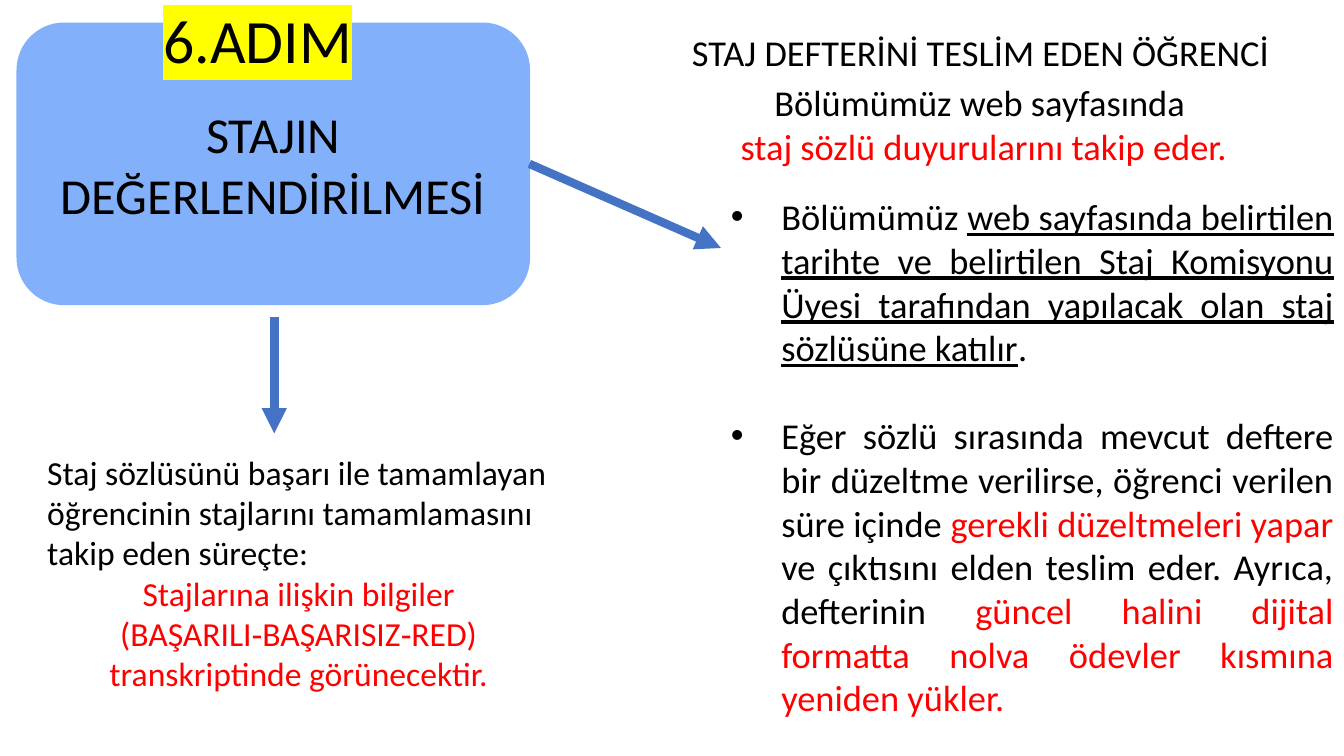
from dataclasses import dataclass

from lxml.etree import SubElement
from pptx import Presentation
from pptx.dml.color import RGBColor
from pptx.enum.shapes import MSO_CONNECTOR as Connector, MSO_SHAPE as Preset
from pptx.enum.text import MSO_ANCHOR as Anchor, MSO_AUTO_SIZE as AutoSize, PP_ALIGN as Align
from pptx.oxml.ns import qn
from pptx.util import Inches, Pt

BLACK = RGBColor(0x00, 0x00, 0x00)
RED = RGBColor(0xFF, 0x00, 0x00)
YELLOW = RGBColor(0xFF, 0xFF, 0x00)
PANEL_BLUE = RGBColor(0x82, 0xB0, 0xFA)
ARROW_BLUE = RGBColor(0x44, 0x72, 0xC4)
FONT = "Calibri"
WIDTH, HEIGHT = Inches(13.33), Inches(7.5)
BULLET_INDENT = Inches(0.5)


@dataclass(frozen=True)
class Run:
    text: str
    color: RGBColor = BLACK
    underline: bool = False
    highlight: RGBColor | None = None


@dataclass(frozen=True)
class Paragraph:
    runs: tuple[Run, ...]
    align: Align = Align.CENTER
    bullet: bool = False
    space_after: float = 0
    line_spacing: float = 1.0


@dataclass(frozen=True)
class Area:
    """Left, top, width and height in percent of the slide."""
    left: float
    top: float
    width: float
    height: float

    def emu(self) -> tuple[int, int, int, int]:
        return across(self.left), down(self.top), across(self.width), down(self.height)


@dataclass(frozen=True)
class TextBlock:
    area: Area
    size: float
    paragraphs: tuple[Paragraph, ...]
    anchor: Anchor = Anchor.TOP
    grow: bool = True


def across(percent: float) -> int:
    return round(WIDTH * percent / 100)


def down(percent: float) -> int:
    return round(HEIGHT * percent / 100)


def add_bullet(paragraph) -> None:
    properties = paragraph._p.get_or_add_pPr()
    properties.set("marL", str(BULLET_INDENT))
    properties.set("indent", str(-BULLET_INDENT))
    SubElement(properties, qn("a:buFont")).set("typeface", "Arial")
    SubElement(properties, qn("a:buChar")).set("char", "•")


def write(frame, paragraphs: tuple[Paragraph, ...], *, size: float,
          anchor: Anchor = Anchor.TOP, grow: bool = False) -> None:
    frame.word_wrap = True
    frame.auto_size = AutoSize.SHAPE_TO_FIT_TEXT if grow else AutoSize.NONE
    frame.vertical_anchor = anchor
    for index, content in enumerate(paragraphs):
        paragraph = frame.add_paragraph() if index else frame.paragraphs[0]
        paragraph.alignment = content.align
        paragraph.line_spacing = content.line_spacing
        paragraph.space_after = Pt(content.space_after)
        if content.bullet:
            add_bullet(paragraph)
        for part in content.runs:
            run = paragraph.add_run()
            run.text = part.text
            run.font.size = Pt(size)
            run.font.underline = part.underline
            run.font.color.rgb = part.color
            if part.highlight is not None:
                marker = SubElement(run.font._element, qn("a:highlight"))
                SubElement(marker, qn("a:srgbClr")).set("val", str(part.highlight))
            run.font.name = FONT


def add_arrow(slide, start: tuple[int, int], end: tuple[int, int]):
    arrow = slide.shapes.add_connector(Connector.STRAIGHT, *start, *end)
    arrow.line.color.rgb = ARROW_BLUE
    arrow.line.width = Pt(6)
    SubElement(arrow.line._get_or_add_ln(), qn("a:tailEnd")).set("type", "triangle")
    SubElement(arrow._element.spPr, qn("a:effectLst"))
    return arrow


PANEL = Area(1.28, 3.07, 38.11, 37.2)
PANEL_TEXT = (Paragraph((Run("STAJIN DEĞERLENDİRİLMESİ"),)),)

STEP = TextBlock(Area(9.83, -3.87, 18.68, 19.33), 44, (
    Paragraph((Run("6.ADIM", highlight=YELLOW),), line_spacing=0.9),
), Anchor.MIDDLE, grow=False)

STUDENT = TextBlock(Area(49.21, 3.33, 48.16, 7.2), 26, (
    Paragraph((Run("STAJ DEFTERİNİ TESLİM EDEN ÖĞRENCİ "),)),
))

ANNOUNCEMENTS = TextBlock(Area(51.76, 10, 42.91, 13.07), 26, (
    Paragraph((Run("Bölümümüz web sayfasında "),)),
    Paragraph((Run("staj sözlü duyurularını takip eder.", RED),)),
))

ORAL_EXAM = TextBlock(Area(53.64, 25.07, 46.36, 71.33), 26, (
    Paragraph((
        Run("Bölümümüz "),
        Run("web sayfasında belirtilen tarihte ve belirtilen Staj Komisyonu Üyesi "
            "tarafından yapılacak olan staj sözlüsüne katılır", underline=True),
        Run("."),
    ), Align.JUSTIFY, bullet=True, space_after=31.7),
    Paragraph((
        Run("Eğer sözlü sırasında mevcut deftere bir düzeltme verilirse, "
            "öğrenci verilen süre içinde "),
        Run("gerekli düzeltmeleri yapar ", RED),
        Run("ve çıktısını elden teslim eder. Ayrıca, defterinin "),
        Run("güncel halini dijital formatta nolva ödevler kısmına yeniden yükler.", RED),
    ), Align.JUSTIFY, bullet=True),
))

RESULT = TextBlock(Area(2.78, 59.07, 39.46, 33.6), 24, (
    Paragraph((Run("Staj sözlüsünü başarı ile tamamlayan öğrencinin "
                   "stajlarını tamamlamasını takip eden süreçte: "),), Align.LEFT),
    *(Paragraph((Run(line, RED),)) for line in (
        "Stajlarına ilişkin bilgiler ",
        "(BAŞARILI‐BAŞARISIZ‐RED) ",
        "transkriptinde görünecektir. ",
    )),
))


def main() -> None:
    deck = Presentation()
    deck.slide_width, deck.slide_height = WIDTH, HEIGHT
    slide = deck.slides.add_slide(deck.slide_layouts[6])

    panel = slide.shapes.add_shape(Preset.ROUNDED_RECTANGLE, *PANEL.emu())
    panel.shadow.inherit = False
    panel.fill.solid()
    panel.fill.fore_color.rgb = PANEL_BLUE
    panel.line.color.rgb = PANEL_BLUE
    panel.line.width = Pt(1)
    write(panel.text_frame, PANEL_TEXT, size=36, anchor=Anchor.MIDDLE)

    for block in (STEP, STUDENT, ANNOUNCEMENTS, ORAL_EXAM, RESULT):
        box = slide.shapes.add_textbox(*block.area.emu())
        write(box.text_frame, block.paragraphs, size=block.size,
              anchor=block.anchor, grow=block.grow)

    panel_right = across(PANEL.left + PANEL.width), down(PANEL.top + PANEL.height / 2)
    to_exam = add_arrow(slide, panel_right, (across(ORAL_EXAM.area.left), down(32.8)))
    to_exam.begin_connect(panel, 3)
    add_arrow(slide, (across(20.41), down(41.87)), (across(20.41), down(57.33)))

    deck.save("out.pptx")


if __name__ == "__main__":
    main()
